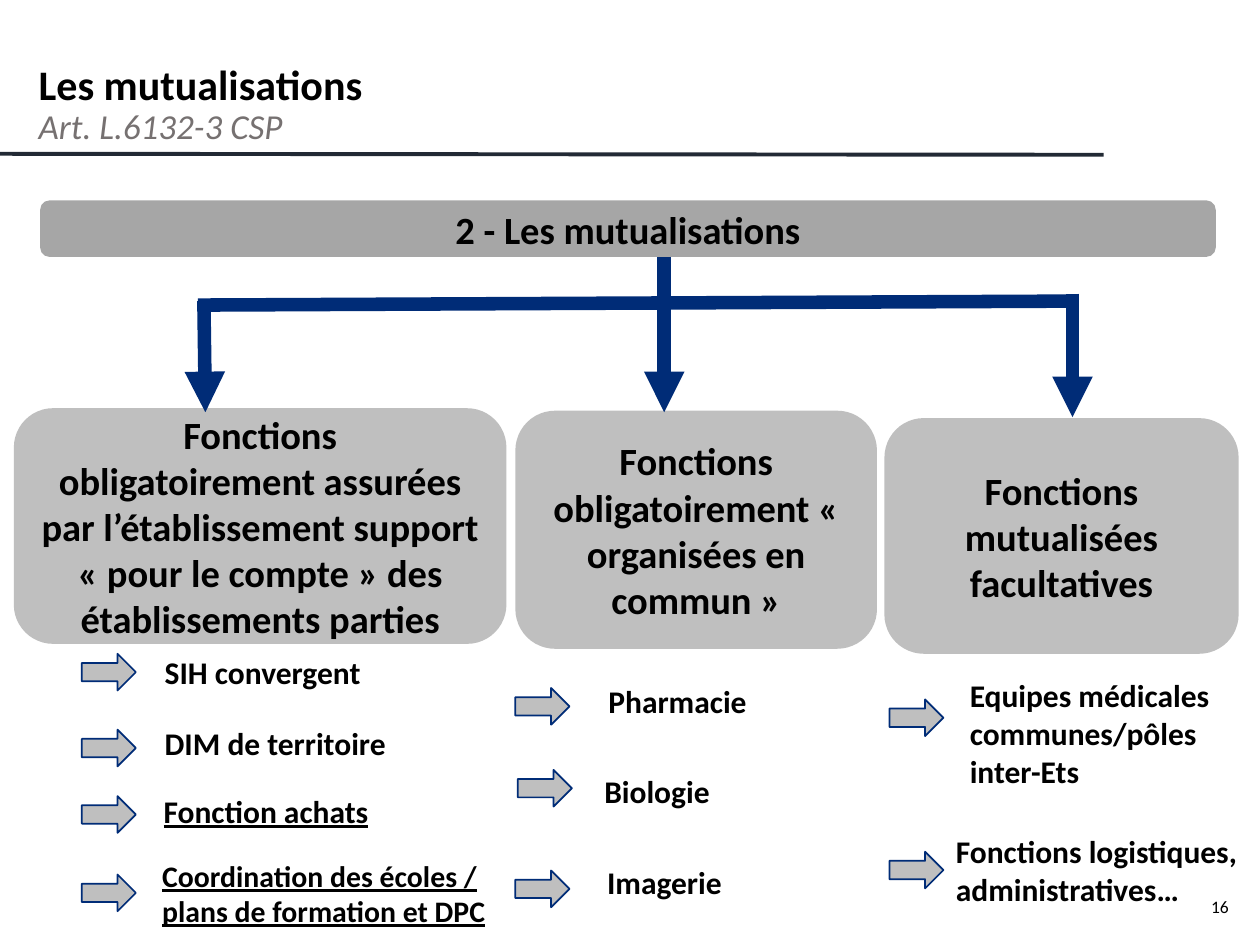
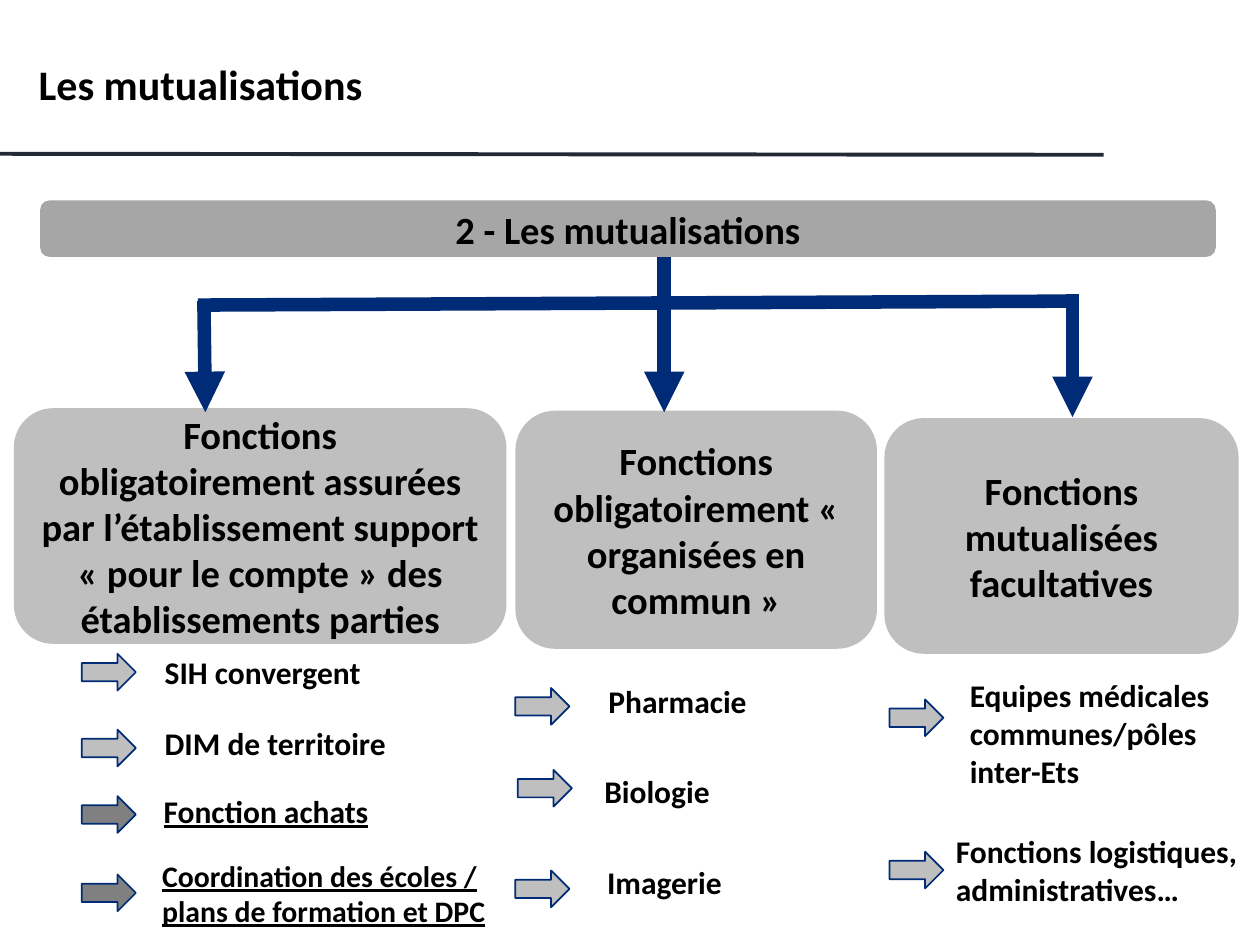
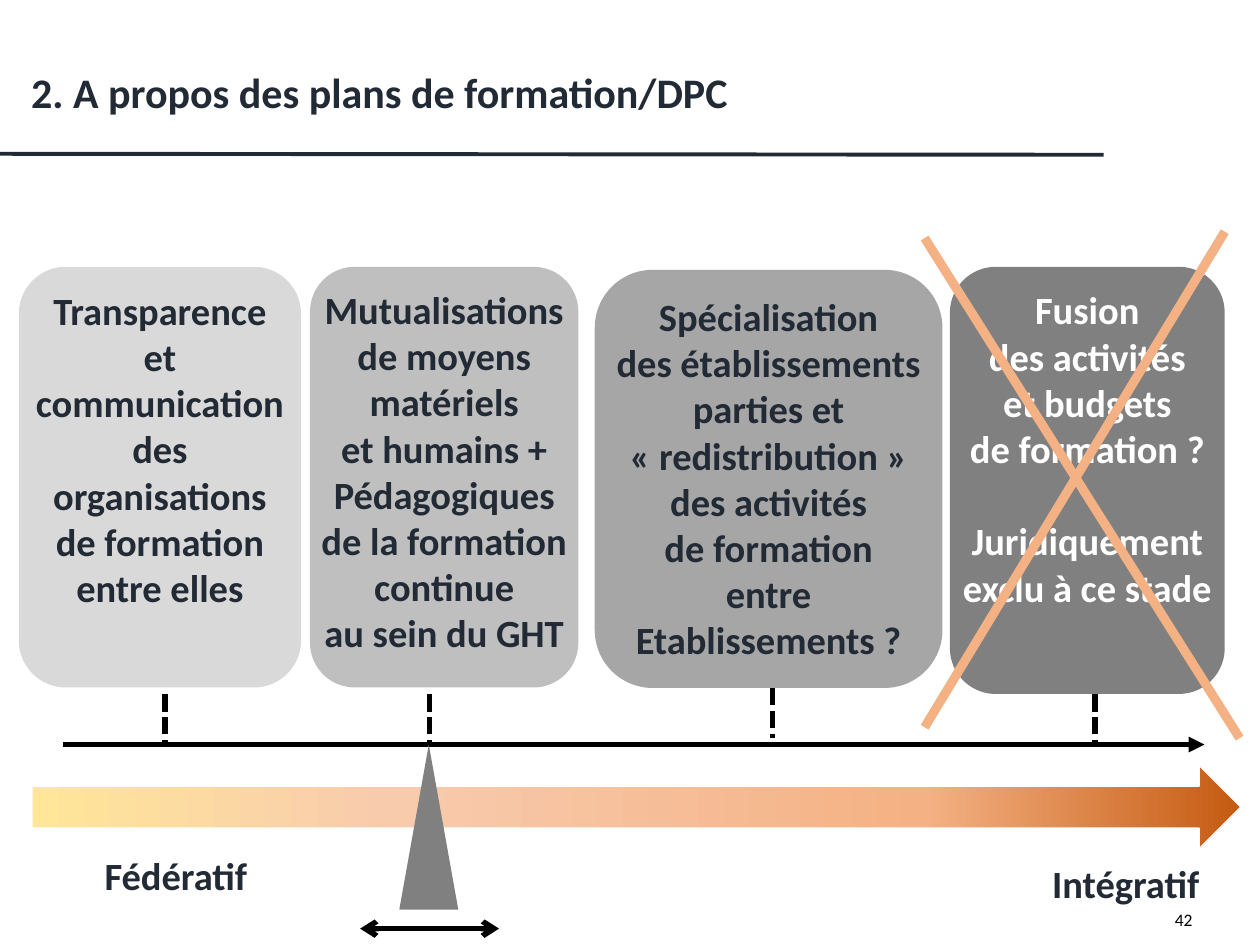
from dataclasses import dataclass

from lxml import etree
from pptx import Presentation
from pptx.dml.color import RGBColor
from pptx.enum.dml import MSO_LINE
from pptx.enum.shapes import MSO_CONNECTOR, MSO_SHAPE
from pptx.enum.text import MSO_ANCHOR, PP_ALIGN
from pptx.oxml.ns import qn
from pptx.util import Cm, Pt

LEFT, CENTER, RIGHT = PP_ALIGN.LEFT, PP_ALIGN.CENTER, PP_ALIGN.RIGHT
TOP, MIDDLE = MSO_ANCHOR.TOP, MSO_ANCHOR.MIDDLE
ROUNDED = MSO_SHAPE.ROUNDED_RECTANGLE
RIGHT_ARROW = MSO_SHAPE.RIGHT_ARROW
TRIANGLE = MSO_SHAPE.ISOSCELES_TRIANGLE
STRAIGHT = MSO_CONNECTOR.STRAIGHT
DOTTED = MSO_LINE.SQUARE_DOT


@dataclass(frozen=True)
class Theme:
    font: str = "Calibri"
    black: str = "000000"
    white: str = "FFFFFF"
    ink: str = "222A35"
    navy: str = "002C77"
    subtitle_grey: str = "767171"
    pale: str = "D9D9D9"
    light: str = "BFBFBF"
    medium: str = "A6A6A6"
    dark: str = "808080"
    orange: str = "F4B183"
    scale: tuple = ((0, "FFE699"), (30, "F8CBAD"), (74, "F4B183"), (100, "C55A11"))
    title_size: float = 24
    box_size: float = 22
    subtitle_size: float = 20
    item_size: float = 18
    small_item_size: float = 17
    number_size: float = 10


THEME = Theme()


def rgb(color):
    return RGBColor.from_string(color)


def add_text(tf, text, *, size, color=THEME.black, bold=True, italic=False,
             underline=False, align=LEFT, spacing=None, space_before=None):
    """Append one paragraph per line of text, filling an empty frame first."""
    for line in text.split("\n"):
        p = tf.paragraphs[0] if not tf.text else tf.add_paragraph()
        p.alignment = align
        if spacing:
            p.line_spacing = spacing
        if space_before:
            p.space_before = Pt(space_before)
            space_before = None
        r = p.add_run()
        r.text = line
        font = r.font
        font.name, font.size, font.color.rgb = THEME.font, Pt(size), rgb(color)
        font.bold, font.italic, font.underline = bold, italic, underline


class Deck:
    """Holds the theme and the slide being drawn; all positions are in cm."""

    def __init__(self, theme):
        self.theme = theme
        self.prs = Presentation()
        self.prs.slide_width, self.prs.slide_height = Cm(25.4), Cm(19.05)
        self.slide = None

    def new_slide(self):
        self.slide = self.prs.slides.add_slide(self.prs.slide_layouts[6])
        self.line((0, 3.1), (22.25, 3.12), self.theme.ink, 2.25)

    def text(self, box, text, *, anchor=TOP, wrap=True, **fmt):
        tf = self.slide.shapes.add_textbox(*map(Cm, box)).text_frame
        tf.word_wrap, tf.vertical_anchor = wrap, anchor
        add_text(tf, text, **fmt)
        return tf

    def title(self, box, text, **fmt):
        return self.text(box, text, size=self.theme.title_size, spacing=0.9, **fmt)

    def slide_number(self, left, top, number):
        self.text((left, top, 5.72, 1.02), number, size=self.theme.number_size,
                  bold=False, align=RIGHT)

    def shape(self, kind, box, fill, line=None):
        sp = self.slide.shapes.add_shape(kind, *map(Cm, box))
        sp.shadow.inherit = False
        if isinstance(fill, str):
            sp.fill.solid()
            sp.fill.fore_color.rgb = rgb(fill)
        else:
            self.gradient(sp, fill)
        if line:
            sp.line.color.rgb, sp.line.width = rgb(line), Pt(1)
        else:
            sp.line.fill.background()
        return sp

    def gradient(self, sp, stops):
        sp.fill.gradient()
        sp.fill.gradient_angle = 0
        stop_list = sp._element.spPr.find(".//" + qn("a:gsLst"))
        for stop in list(stop_list):
            stop_list.remove(stop)
        for percent, color in stops:
            stop = etree.SubElement(stop_list, qn("a:gs"), pos=str(percent * 1000))
            etree.SubElement(stop, qn("a:srgbClr"), val=color)

    def card(self, box, text, fill, *, color=THEME.black, anchor=MIDDLE, wrap=True):
        tf = self.shape(ROUNDED, box, fill).text_frame
        tf.word_wrap, tf.vertical_anchor = wrap, anchor
        add_text(tf, text, size=self.theme.box_size, color=color, align=CENTER)
        return tf

    def line(self, start, end, color, width, *, dash=None, head=None, tail=None):
        cn = self.slide.shapes.add_connector(STRAIGHT, *map(Cm, start + end))
        cn.line.color.rgb, cn.line.width = rgb(color), Pt(width)
        if dash:
            cn.line.dash_style = dash
        ln = cn.line._get_or_add_ln()
        for tag, kind in (("a:headEnd", head), ("a:tailEnd", tail)):
            if kind:
                etree.SubElement(ln, qn(tag), type=kind)
        etree.SubElement(cn._element.spPr, qn("a:effectLst"))


def draw_mutualisations(deck, support_fill):
    """Tree of the three families of functions and their items."""
    t = deck.theme
    deck.new_slide()
    title = deck.title((0.53, 1.17, 24.28, 1.7), "Les mutualisations")

    deck.card((0.81, 4.04, 23.7, 1.14), "2 - Les mutualisations", t.medium)
    families = (
        ((0.28, 8.23, 9.93, 4.75),
         "Fonctions\nobligatoirement assurées par l’établissement support\n"
         "« pour le compte » des établissements parties"),
        ((10.39, 8.28, 7.29, 4.8),
         "Fonctions obligatoirement « organisées en commun »"),
        ((17.83, 8.43, 7.14, 4.75), "Fonctions mutualisées facultatives"),
    )
    for box, text in families:
        deck.card(box, text, t.light)

    branches = (
        ((13.39, 5.18), (13.39, 8.31)),
        ((4.11, 6.07), (4.14, 8.31)),
        ((21.62, 5.92), (21.62, 8.41)),
    )
    for start, end in branches:
        deck.line(start, end, t.navy, 7.75, tail="triangle")
    deck.line((3.99, 6.15), (21.62, 6.07), t.navy, 7.75)

    underlined = {"underline": True}
    centered = {"align": CENTER}
    items = (
        ((1.65, 13.18), t.light, (3.07, 12.7, 4.5, 1.7), "SIH convergent", {}),
        ((1.65, 14.71), t.light, (3.07, 14.33, 5.56, 1.3), "DIM de territoire", {}),
        ((1.65, 16.05), support_fill, (3.05, 15.49, 5.08, 1.7),
         "Fonction achats", underlined),
        ((1.65, 17.63), support_fill, (3.02, 17.22, 7.16, 1.57),
         "Coordination des écoles / plans de formation et DPC",
         {"size": t.small_item_size, **underlined}),
        ((10.39, 13.87), t.light, (11.63, 13.28, 4.06, 1.7), "Pharmacie", centered),
        ((10.44, 15.52), t.light, (11.71, 15.09, 3.07, 1.7), "Biologie", centered),
        ((10.39, 17.55), t.light, (11.63, 16.92, 3.53, 1.7), "Imagerie", centered),
        ((17.93, 14.1), t.light, (19.3, 13.41, 5.69, 2.72),
         "Equipes médicales communes/pôles inter-Ets", {}),
        ((17.93, 17.17), t.light, (19.02, 16.69, 6.38, 1.7),
         "Fonctions logistiques, administratives…", {}),
    )
    for arrow, fill, box, text, fmt in items:
        deck.shape(RIGHT_ARROW, arrow + (1.09, 0.74), fill, line=t.navy)
        deck.text(box, text, anchor=MIDDLE, **{"size": t.item_size, **fmt})
    return title


def draw_training_plans(deck):
    """Scale of integration, from federative to integrative."""
    t = deck.theme
    deck.new_slide()
    deck.title((0.38, 0.86, 21.82, 2.11), "2. A propos des plans de formation/DPC",
               color=t.ink, anchor=MIDDLE)
    axis = 15.01
    deck.line((1.27, axis), (24.28, axis), t.black, 3, tail="triangle")

    stages = (
        ((0.38, 5.38, 5.69, 8.48), t.pale, t.ink,
         "Transparence\net\ncommunication\ndes\norganisations\nde formation\n"
         "entre elles"),
        ((6.25, 5.38, 5.41, 8.48), t.light, t.ink,
         "Mutualisations\nde moyens\nmatériels\net humains +\nPédagogiques\n"
         "de la formation\ncontinue\nau sein du GHT"),
        ((11.99, 5.44, 7.01, 8.43), t.medium, t.ink,
         "Spécialisation\ndes établissements\nparties et\n« redistribution »\n"
         "des activités\nde formation\nentre\nEtablissements ?"),
        ((19.15, 5.38, 5.54, 8.61), t.dark, t.white,
         "Fusion\ndes activités\net budgets\nde formation ?"),
    )
    for box, fill, color, text in stages:
        tf = deck.card(box, text, fill, color=color, anchor=TOP, wrap=False)
    add_text(tf, "Juridiquement\nexclu à ce stade", size=t.box_size, color=t.white,
             align=CENTER, space_before=26.4)

    for x, top in ((3.33, 14), (8.66, 14), (15.57, 13.87), (22.07, 14)):
        deck.line((x, top), (x, top + 1.01), t.black, 3.25, dash=DOTTED)
    deck.line((18.64, 4.8), (24.99, 14.88), t.orange, 5.25)
    deck.line((24.69, 4.67), (18.64, 14.66), t.orange, 5.25)

    deck.shape(RIGHT_ARROW, (0.64, 15.42, 24.38, 1.7), t.scale, line=t.white)
    deck.shape(TRIANGLE, (8.05, axis, 1.19, 3.33), t.dark)
    deck.line((7.26, 18.72), (10.06, 18.72), t.black, 3, head="arrow", tail="arrow")
    for left, top, text in ((0.84, 17.06, "Fédératif"), (19.99, 17.22, "Intégratif")):
        deck.text((left, top, 5.41, 1.3), text, size=t.box_size, color=t.ink,
                  align=CENTER, wrap=False)
    deck.slide_number(18.57, 18.19, "42")


def main():
    deck = Deck(THEME)
    title = draw_mutualisations(deck, THEME.light)
    add_text(title, "Art. L.6132-3 CSP", size=THEME.subtitle_size, spacing=0.9,
             color=THEME.subtitle_grey, bold=False, italic=True)
    deck.slide_number(19.3, 17.93, "16")
    draw_mutualisations(deck, THEME.dark)
    draw_training_plans(deck)
    deck.prs.save("out.pptx")


if __name__ == "__main__":
    main()
